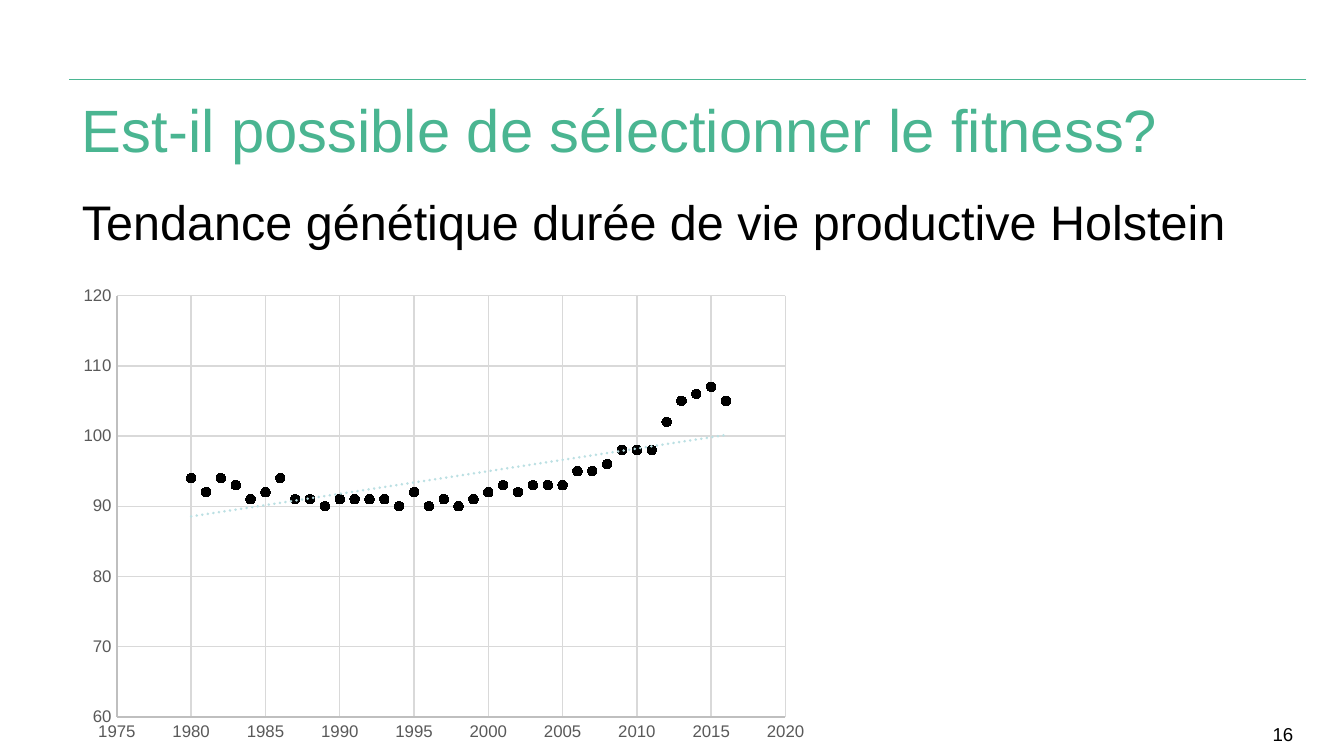
from lxml.etree import SubElement, fromstring
from pptx import Presentation
from pptx.chart.data import XyChartData
from pptx.dml.color import RGBColor
from pptx.enum.chart import XL_CHART_TYPE, XL_MARKER_STYLE, XL_TICK_MARK
from pptx.enum.shapes import MSO_CONNECTOR
from pptx.enum.text import MSO_ANCHOR, PP_ALIGN
from pptx.oxml.ns import nsdecls, qn
from pptx.util import Cm, Pt

GREEN = RGBColor(0x4A, 0xB5, 0x91)
RULE_GREEN = RGBColor(0x4B, 0xB6, 0x92)
BLACK = RGBColor(0, 0, 0)
LABEL_GREY = RGBColor(0x59, 0x59, 0x59)
AXIS_GREY = RGBColor(0xBF, 0xBF, 0xBF)
GRID_GREY = RGBColor(0xD9, 0xD9, 0xD9)
TREND_BLUE = RGBColor(0xBB, 0xE0, 0xE3)

LEFT, WIDTH, RULE_TOP = 1.3, 23.39, 1.5
FIRST_YEAR = 1980
LIFE_INDEX = [
    94, 92, 94, 93, 91, 92, 94, 91, 91, 90, 91, 91, 91, 91, 90, 92, 90, 91, 90,
    91, 92, 93, 92, 93, 93, 93, 95, 95, 96, 98, 98, 98, 102, 105, 106, 107, 105,
]

PLOT_LAYOUT = f"""<c:layout {nsdecls('c')}><c:manualLayout>
<c:layoutTarget val="inner"/><c:xMode val="edge"/><c:yMode val="edge"/>
<c:x val="0.064"/><c:y val="0.04"/><c:w val="0.89"/><c:h val="0.888"/>
</c:manualLayout></c:layout>"""
TREND_LINE = f"""<c:trendline {nsdecls('c', 'a')}><c:spPr>
<a:ln w="{Pt(1.5)}" cap="rnd"><a:solidFill><a:srgbClr val="{TREND_BLUE}"/></a:solidFill>
<a:prstDash val="sysDot"/></a:ln></c:spPr><c:trendlineType val="linear"/>
<c:dispRSqr val="0"/><c:dispEq val="0"/></c:trendline>"""


class SlideBuilder:
    """Draws styled elements on the current slide."""

    font_name = "Arial"

    def __init__(self, slide):
        self.slide = slide

    def style_font(self, font, size, color):
        font.name = self.font_name
        font.size = Pt(size)
        font.color.rgb = color

    def add_rule(self, left, top, width):
        rule = self.slide.shapes.add_connector(
            MSO_CONNECTOR.STRAIGHT, Cm(left + width), Cm(top), Cm(left), Cm(top))
        rule.line.color.rgb = RULE_GREEN
        rule.line.width = Pt(0.5)
        SubElement(rule._element.spPr, qn("a:effectLst"))

    def add_text(self, text, left, top, width, height, size, color=BLACK,
                 anchor=MSO_ANCHOR.MIDDLE, alignment=PP_ALIGN.LEFT):
        box = self.slide.shapes.add_textbox(Cm(left), Cm(top), Cm(width), Cm(height))
        frame = box.text_frame
        frame.word_wrap = True
        frame.vertical_anchor = anchor
        paragraph = frame.paragraphs[0]
        paragraph.text = text
        paragraph.alignment = alignment
        self.style_font(paragraph.font, size, color)

    def style_axis(self, axis, minimum, maximum, step):
        axis.minimum_scale, axis.maximum_scale = minimum, maximum
        axis.major_unit = step
        axis.major_tick_mark = axis.minor_tick_mark = XL_TICK_MARK.NONE
        axis.has_major_gridlines = True
        for line, color in ((axis.format.line, AXIS_GREY),
                            (axis.major_gridlines.format.line, GRID_GREY)):
            line.color.rgb = color
            line.width = Pt(0.75)
        axis.tick_labels.number_format = "General"
        axis.tick_labels.number_format_is_linked = False
        self.style_font(axis.tick_labels.font, 9, LABEL_GREY)

    def add_trend_chart(self, left, top, width, height):
        data = XyChartData()
        points = data.add_series("Series 1")
        for year, value in enumerate(LIFE_INDEX, FIRST_YEAR):
            points.add_data_point(year, value)
        chart = self.slide.shapes.add_chart(
            XL_CHART_TYPE.XY_SCATTER, Cm(left), Cm(top), Cm(width), Cm(height), data).chart
        chart.has_legend = chart.has_title = False
        self.style_font(chart.font, 10, BLACK)
        self.style_axis(chart.category_axis, 1975, 2020, 5)
        self.style_axis(chart.value_axis, 60, 120, 10)

        plot = chart.plots[0]
        plot.vary_by_categories = False
        series = plot.series[0]
        series.format.line.fill.background()
        marker = series.marker
        marker.style, marker.size = XL_MARKER_STYLE.CIRCLE, 5
        for fill in (marker.format.fill, marker.format.line.fill):
            fill.solid()
            fill.fore_color.rgb = BLACK
        series._element.find(qn("c:xVal")).addprevious(fromstring(TREND_LINE))

        plot_area = chart._chartSpace.chart.plotArea
        for layout in plot_area.findall(qn("c:layout")):
            plot_area.remove(layout)
        plot_area.insert(0, fromstring(PLOT_LAYOUT))


def main():
    presentation = Presentation()
    presentation.slide_width, presentation.slide_height = Cm(25.4), Cm(14.29)
    builder = SlideBuilder(presentation.slides.add_slide(presentation.slide_layouts[6]))
    builder.add_rule(LEFT, RULE_TOP, WIDTH)
    builder.add_text("Est-il possible de sélectionner le fitness?",
                     LEFT, RULE_TOP, WIDTH, 1.85, 32, GREEN)
    builder.add_text("Tendance génétique durée de vie productive Holstein",
                     LEFT, 3.5, WIDTH, 9.65, 26, anchor=MSO_ANCHOR.TOP)
    builder.add_text("16", 19.41, 13.54, 5.28, 0.66, 10, alignment=PP_ALIGN.RIGHT)
    builder.add_trend_chart(LEFT, 5.23, 14.2, 8.97)
    presentation.save("out.pptx")


if __name__ == "__main__":
    main()
